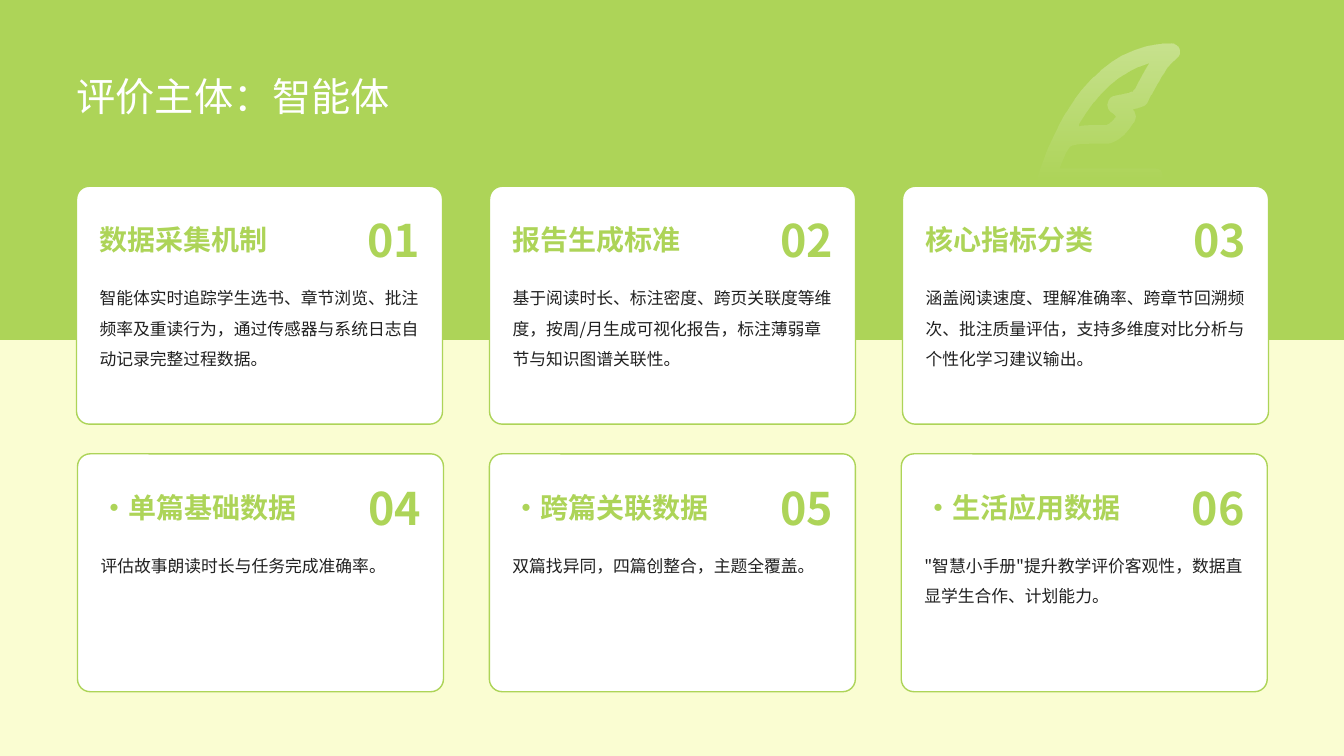
from lxml import etree
from pptx import Presentation
from pptx import util as u
from pptx.dml import color as colors
from pptx.enum import lang, shapes, text
from pptx.oxml import ns

Pt = u.Pt
FONT = "Noto Sans CJK SC"
GREEN, CREAM, WHITE, INK = "ADD458", "FAFDD2", "FFFFFF", "212121"

CARDS = [
    ("数据采集机制", "智能体实时追踪学生选书、章节浏览、批注频率及重读行为，通过传感器与系统日志自动记录完整过程数据。"),
    ("报告生成标准", "基于阅读时长、标注密度、跨页关联度等维度，按周/月生成可视化报告，标注薄弱章节与知识图谱关联性。"),
    ("核心指标分类", "涵盖阅读速度、理解准确率、跨章节回溯频次、批注质量评估，支持多维度对比分析与个性化学习建议输出。"),
    ("•单篇基础数据", "评估故事朗读时长与任务完成准确率。"),
    ("•跨篇关联数据", "双篇找异同，四篇创整合，主题全覆盖。"),
    ("•生活应用数据", "\"智慧小手册\"提升教学评价客观性，数据直显学生合作、计划能力。"),
]

# Feather contours in units of 0.72 pt: pairs are corners, sixes are curves
FEATHER_WIDTH, FEATHER_UNIT = 140, 0.72
FEATHER = [
    [(132, 0), (140, 0, 144, 10, 137, 15), (130, 21, 126, 26, 120, 37),
     (118, 40), (112, 51), (111, 54, 109, 56, 108, 59), (106, 62, 102, 63, 94, 65),
     (94, 66), (95, 67), (97, 71, 97, 74, 95, 78), (94, 79),
     (85, 92, 76, 99, 66, 99), (56, 99), (38, 99, 33, 100, 31, 102),
     (29, 105, 25, 112, 21, 123), (116, 123), (120, 123, 123, 126, 123, 131),
     (123, 136), (123, 137, 122, 138, 121, 138), (3, 138), (1, 138, 0, 137, 0, 136),
     (0, 131), (0, 130, 0, 129, 1, 128), (1, 127, 1, 127, 1, 126),
     (12, 95, 26, 68, 43, 46), (67, 17, 97, 0, 132, 0)],
    [(110, 20), (109, 20), (81, 28, 58, 49, 40, 80), (40, 82), (41, 82),
     (47, 81, 52, 81, 58, 81), (66, 81), (69, 81, 72, 79, 77, 73), (77, 73),
     (77, 72), (75, 70, 74, 69, 72, 68), (71, 67), (66, 62, 69, 53, 76, 52),
     (80, 51, 85, 50, 90, 49), (92, 48), (93, 48, 93, 48, 94, 48), (94, 47),
     (96, 45), (97, 43), (98, 41), (104, 30), (106, 27, 108, 23, 110, 20)],
]


def rgb(value):
    return colors.RGBColor.from_string(value)


def add_text(page, content, left, top, width, height, size, color, bold=False,
             align=text.PP_ALIGN.LEFT, anchor=text.MSO_ANCHOR.TOP, spacing=1.0, wrap=True):
    box = page.shapes.add_textbox(Pt(left), Pt(top), Pt(width), Pt(height))
    frame = box.text_frame
    frame.margin_left = frame.margin_right = frame.margin_top = frame.margin_bottom = 0
    frame.word_wrap, frame.vertical_anchor = wrap, anchor
    para = frame.paragraphs[0]
    para.alignment, para.line_spacing = align, spacing
    span = para.add_run()
    span.text = content
    font = span.font
    font.size, font.bold, font.name = Pt(size), bold, FONT
    font.color.rgb = rgb(color)
    font.language_id = lang.MSO_LANGUAGE_ID.SIMPLIFIED_CHINESE
    east_asian = etree.SubElement(span._r.get_or_add_rPr(), ns.qn("a:ea"))
    east_asian.set("typeface", FONT)


def add_panel(page, kind, left, top, width, height, fill, line=None):
    panel = page.shapes.add_shape(kind, Pt(left), Pt(top), Pt(width), Pt(height))
    panel.shadow.inherit = False
    panel.fill.solid()
    panel.fill.fore_color.rgb = rgb(fill)
    if line:
        panel.line.color.rgb = rgb(line)
        panel.line.width = Pt(1)
    else:
        panel.line.fill.background()
    return panel


def bend_segments(outline, parts):
    """Turn the straight segments that stand for curves into Bézier curves."""
    for segment, part in zip(list(outline.iter(ns.qn("a:lnTo"))), parts):
        if len(part) == 6:
            curve = etree.Element(ns.qn("a:cubicBezTo"))
            for x, y in zip(part[::2], part[1::2]):
                etree.SubElement(curve, ns.qn("a:pt"), x=str(x), y=str(y))
            segment.getparent().replace(segment, curve)


def draw_feather(page, left, top):
    outer, inner = ([part[-2:] for part in contour] for contour in FEATHER)
    builder = page.shapes.build_freeform(*outer[0], scale=Pt(FEATHER_UNIT))
    builder.add_line_segments(outer[1:-1] + outer[-1:], close=False)
    builder.move_to(*inner[0])
    builder.add_line_segments(inner[1:], close=False)
    feather = builder.convert_to_shape(Pt(left), Pt(top))
    feather.width = Pt(FEATHER_WIDTH * FEATHER_UNIT)
    outline = next(feather._element.iter(ns.qn("a:path")))
    outline.set("w", str(FEATHER_WIDTH))
    bend_segments(outline, [part for contour in FEATHER for part in contour[1:]])
    etree.SubElement(outline, ns.qn("a:close"))
    feather.shadow.inherit = False
    feather.line.fill.background()
    # White fading out downwards
    feather.fill.gradient()
    feather.fill.gradient_angle = 270
    for stop, position, opacity in zip(feather.fill.gradient_stops, (0, 1), (33, 0)):
        stop.position = position
        stop.color.rgb = rgb(WHITE)
        tint = stop._gs.find(ns.qn("a:srgbClr"))
        etree.SubElement(tint, ns.qn("a:alpha")).set("val", str(opacity * 1000))


def draw_header(page, width, height):
    add_panel(page, shapes.MSO_SHAPE.RECTANGLE, 0, 0, width, height, GREEN)
    draw_feather(page, 741.6, 31)
    add_text(page, "评价主体：智能体", 54.7, 28.1, 850.3, 56.9, 28, WHITE,
             anchor=text.MSO_ANCHOR.BOTTOM)


def draw_card(page, left, top, width, height, number, heading, body):
    card = add_panel(page, shapes.MSO_SHAPE.ROUNDED_RECTANGLE, left, top, width, height,
                     WHITE, GREEN)
    card.adjustments[0] = 0.053
    inset = 16.4
    label = dict(color=GREEN, bold=True, anchor=text.MSO_ANCHOR.MIDDLE)
    add_text(page, body, left + inset, top + 65.5, width - 2 * inset + 0.4, 89.3, 12, INK,
             spacing=1.5)
    add_text(page, heading, left + inset, top + 14.7, 157.7, 46.8, 20, **label)
    add_text(page, f"{number:02}", left + width - inset - 57.2, top + 14.7, 57.6, 46.8, 32,
             align=text.PP_ALIGN.RIGHT, wrap=False, **label)


def draw_card_row(page, left, top, step, first):
    for column, (heading, body) in enumerate(CARDS[first:first + 3]):
        draw_card(page, left + column * step, top, 261.4, 169.9,
                  first + column + 1, heading, body)


def main():
    deck = Presentation()
    deck.slide_width, deck.slide_height = Pt(960), Pt(540)
    page = deck.slides.add_slide(deck.slide_layouts[6])
    page.background.fill.solid()
    page.background.fill.fore_color.rgb = rgb(CREAM)
    draw_header(page, 960, 242.8)
    draw_card_row(page, 54.7, 133.1, 295, 0)
    draw_card_row(page, 55.4, 324.2, 294.2, 3)
    deck.save("out.pptx")


if __name__ == "__main__":
    main()
